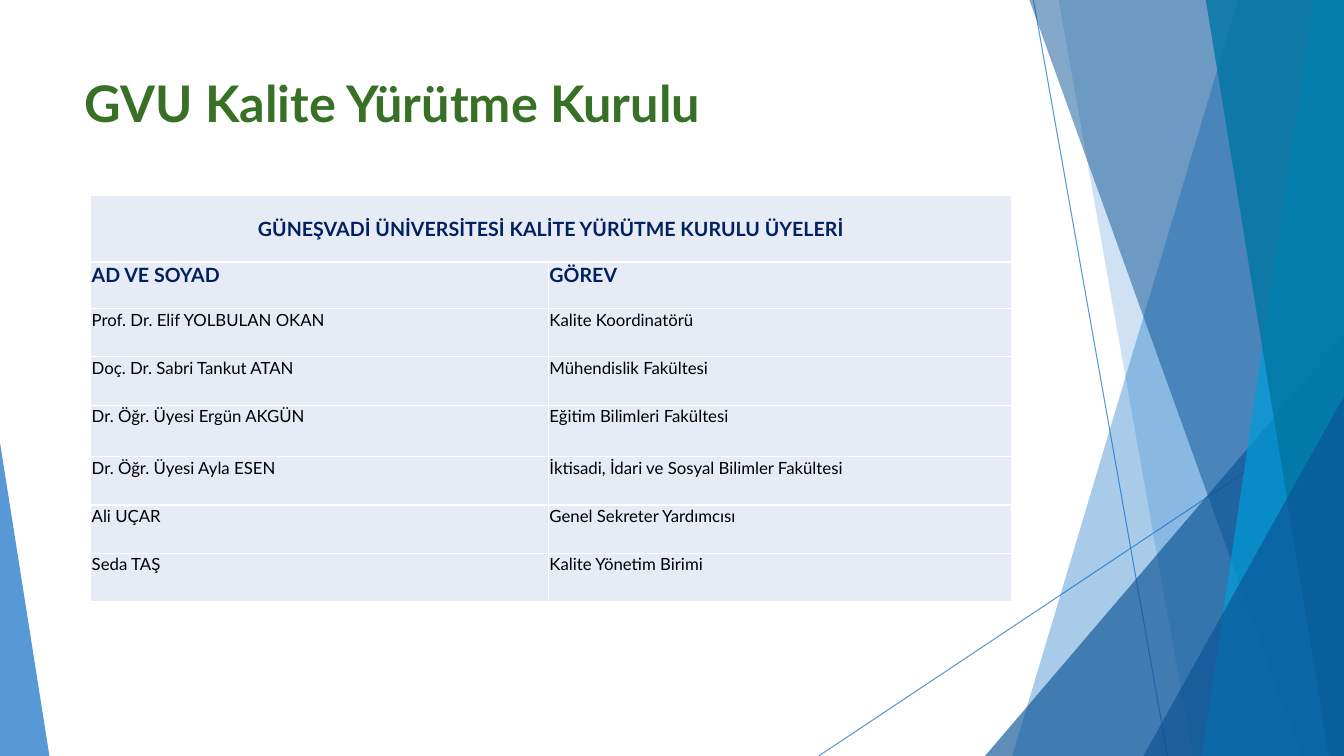
from pptx import Presentation
from pptx.dml.color import RGBColor
from pptx.enum.shapes import MSO_CONNECTOR, MSO_SHAPE
from pptx.enum.text import MSO_ANCHOR, MSO_AUTO_SIZE, PP_ALIGN
from pptx.oxml import parse_xml
from pptx.oxml.ns import nsdecls, qn
from pptx.util import Pt
from lxml.etree import SubElement

PX = 9144
THEME = {
    "font": "Lato", "title": 36, "head": 14, "body": 12,
    "green": "387026", "navy": "002060", "black": "000000",
    "cell": "E7EBF5", "white": "FFFFFF",
    "blue": "0F6FC6", "deep": "0B5394", "cyan": "009DD9", "teal": "0076A3",
}


def paint(shape, fill, tone, alpha):
    fill.solid()
    fill.fore_color.rgb = RGBColor.from_string(THEME[tone])
    for color in shape._element.spPr.iter(qn("a:srgbClr")):
        SubElement(color, qn("a:alpha"), val=str(alpha * 1000))


def style(frame, size, tone, bold):
    for run in frame.paragraphs[0].runs:
        run.font.name = THEME["font"]
        run.font.size = Pt(THEME[size])
        run.font.bold = bold
        run.font.color.rgb = RGBColor.from_string(THEME[tone])


deck = Presentation()
deck.slide_width, deck.slide_height = 1333 * PX, 750 * PX
slide = deck.slides.add_slide(deck.slide_layouts[5])
shapes = slide.shapes

for ends in [(1025, 0, 1158, 750), (1333, 403, 812, 750)]:
    line = shapes.add_connector(MSO_CONNECTOR.STRAIGHT, *[n * PX for n in ends])
    line.line.width = Pt(0.75)
    paint(line, line.line.fill, "blue", 70)
    SubElement(line._element.spPr, qn("a:effectLst"))

facets = [
    ("band", (1228, 1004), "blue", 36),
    ("band", (1050, 1183), "blue", 20),
    ("wedge", (977, 333, 356, 1), "deep", 66),
    ("band", (1021, 1291), "deep", 50),
    ("band", (1303, 1192), "cyan", 70),
    ("band", (1196, 1318), "teal", 80),
    ("wedge", (1134, 393, 199, 1), "deep", 66),
    ("wedge", (0, 439, 49, 0), "blue", 70),
]
for kind, place, tone, alpha in facets:
    if kind == "band":
        top, base = place
        pen = shapes.build_freeform(top, 0, scale=PX)
        pen.add_line_segments([(1333, 0), (1333, 750), (base, 750)], close=True)
        facet = pen.convert_to_shape()
    else:
        left, top, width, tip = place
        facet = shapes.add_shape(MSO_SHAPE.ISOSCELES_TRIANGLE, left * PX,
                                 top * PX, width * PX, (750 - top) * PX)
        facet.adjustments[0] = tip
    facet.shadow.inherit = False
    facet.line.fill.background()
    paint(facet, facet.fill, tone, alpha)

title = shapes.title
title.left, title.top, title.width, title.height = [n * PX for n in (74, 67, 940, 144)]
frame = title.text_frame
frame.text = "GVU Kalite Yürütme Kurulu"
frame.auto_size = MSO_AUTO_SIZE.NONE
frame.vertical_anchor = MSO_ANCHOR.TOP
frame.paragraphs[0].alignment = PP_ALIGN.LEFT
style(frame, "title", "green", True)

rows = [
    ("GÜNEŞVADİ ÜNİVERSİTESİ KALİTE YÜRÜTME KURULU ÜYELERİ", ""),
    ("AD VE SOYAD", "GÖREV"),
    ("Prof. Dr. Elif YOLBULAN OKAN", "Kalite Koordinatörü"),
    ("Doç. Dr. Sabri Tankut ATAN", "Mühendislik Fakültesi"),
    ("Dr. Öğr. Üyesi Ergün AKGÜN", "Eğitim Bilimleri Fakültesi"),
    ("Dr. Öğr. Üyesi Ayla ESEN", "İktisadi, İdari ve Sosyal Bilimler Fakültesi"),
    ("Ali UÇAR", "Genel Sekreter Yardımcısı"),
    ("Seda TAŞ", "Kalite Yönetim Birimi"),
]
widths = [454, 459]
heights = [66, 46, 48, 48, 51, 48, 48, 48]
table = shapes.add_table(len(rows), 2, 90 * PX, 194 * PX,
                         sum(widths) * PX, sum(heights) * PX).table
table.first_row = table.horz_banding = False
for column, width in zip(table.columns, widths):
    column.width = width * PX
for row, height in zip(table.rows, heights):
    row.height = height * PX
table.cell(0, 0).merge(table.cell(0, 1))

for r, texts in enumerate(rows):
    for c, text in enumerate(texts):
        cell = table.cell(r, c)
        cell.margin_left = cell.margin_right = cell.margin_top = PX
        cell.margin_bottom = 0
        cell.fill.solid()
        cell.fill.fore_color.rgb = RGBColor.from_string(THEME["cell"])
        for i, side in enumerate(("lnL", "lnR", "lnT", "lnB")):
            cell._tc.get_or_add_tcPr().insert(i, parse_xml(
                f'<a:{side} {nsdecls("a")} w="12700"><a:solidFill>'
                f'<a:srgbClr val="{THEME["white"]}"/></a:solidFill></a:{side}>'))
        if text:
            cell.text_frame.text = text
            head = r < 2
            style(cell.text_frame, "head" if head else "body",
                  "navy" if head else "black", head)

banner = table.cell(0, 0)
banner.vertical_anchor = MSO_ANCHOR.MIDDLE
banner.text_frame.paragraphs[0].alignment = PP_ALIGN.CENTER

deck.save("out.pptx")
